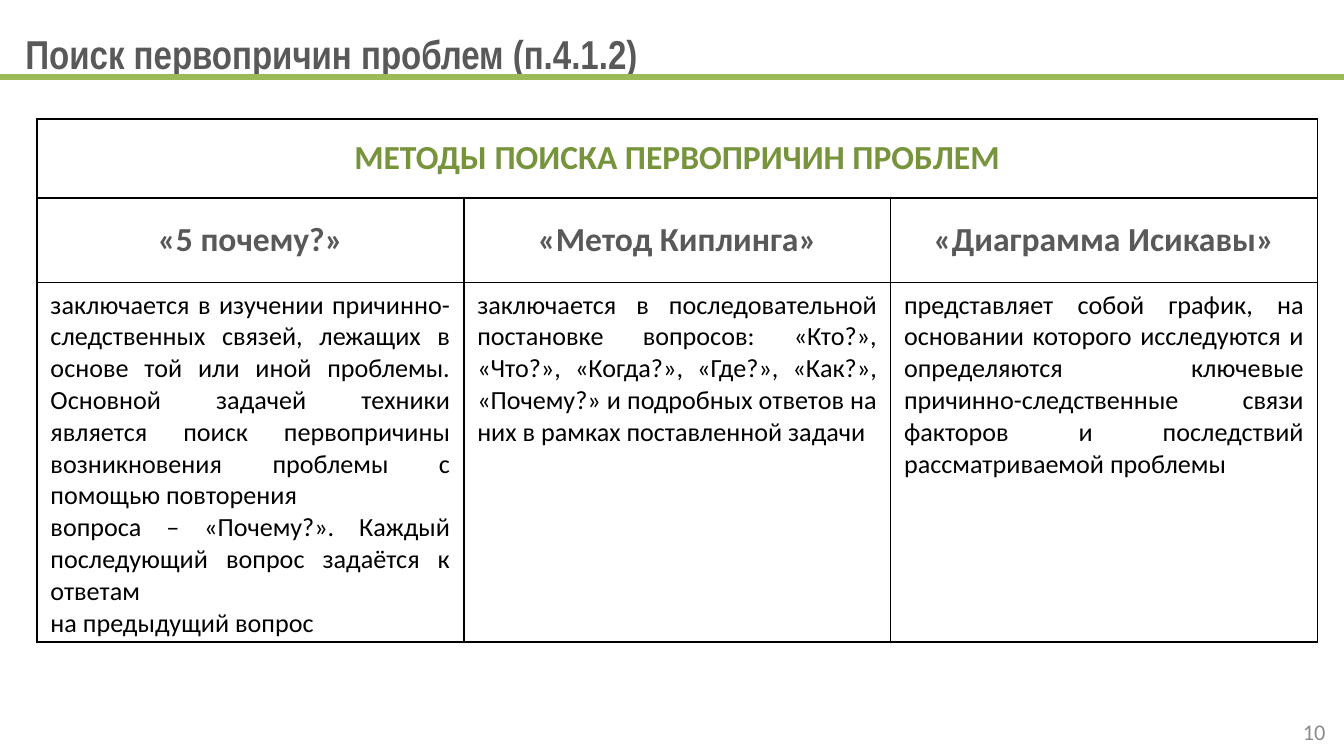
from dataclasses import dataclass

from lxml.etree import SubElement
from pptx import Presentation
from pptx.dml.color import RGBColor
from pptx.enum.shapes import MSO_CONNECTOR
from pptx.enum.text import MSO_ANCHOR, PP_ALIGN
from pptx.oxml.ns import qn
from pptx.util import Cm, Pt


@dataclass(frozen=True)
class Theme:
    heading_font: str = "Arial Narrow"
    body_font: str = "Calibri"
    gray: str = "595959"
    light_gray: str = "8C8C8C"
    rule_green: str = "9BBB59"
    text_green: str = "77933C"
    black: str = "000000"
    title_size: float = 21.6
    header_size: float = 18
    body_size: float = 14
    number_size: float = 12
    rule_width: float = 3
    border_width: float = 1


METHODS = [
    ("«5 почему?»", [
        "заключается в изучении причинно-следственных связей, лежащих в основе той "
        "или иной проблемы. Основной задачей техники является поиск первопричины "
        "возникновения проблемы с помощью повторения",
        "вопроса – «Почему?». Каждый последующий вопрос задаётся к ответам",
        "на предыдущий вопрос",
    ]),
    ("«Метод Киплинга»", [
        "заключается в последовательной постановке вопросов: «Кто?», «Что?», "
        "«Когда?», «Где?», «Как?», «Почему?» и подробных ответов на них в рамках "
        "поставленной задачи",
    ]),
    ("«Диаграмма Исикавы»", [
        "представляет собой график, на основании которого исследуются и определяются "
        "ключевые причинно-следственные связи факторов и последствий "
        "рассматриваемой проблемы",
    ]),
]


class SlideBuilder:
    def __init__(self, slide, theme):
        self.slide = slide
        self.theme = theme

    def fill_text(self, frame, paragraphs, size, color, font=None, bold=False,
                  align=PP_ALIGN.LEFT):
        for index, text in enumerate(paragraphs):
            paragraph = frame.paragraphs[0] if index == 0 else frame.add_paragraph()
            paragraph.text = text
            paragraph.alignment = align
            paragraph.font.name = font or self.theme.body_font
            paragraph.font.size = Pt(size)
            paragraph.font.bold = bold
            paragraph.font.color.rgb = RGBColor.from_string(color)

    def text(self, left, top, width, height, text, size, color, **style):
        box = self.slide.shapes.add_textbox(Cm(left), Cm(top), Cm(width), Cm(height))
        box.text_frame.word_wrap = True
        box.text_frame.vertical_anchor = MSO_ANCHOR.MIDDLE
        self.fill_text(box.text_frame, [text], size, color, **style)

    def rule(self, left, right, y):
        line = self.slide.shapes.add_connector(
            MSO_CONNECTOR.STRAIGHT, Cm(left), Cm(y), Cm(right), Cm(y))
        line.line.color.rgb = RGBColor.from_string(self.theme.rule_green)
        line.line.width = Pt(self.theme.rule_width)
        SubElement(line._element.spPr, qn("a:effectLst"))

    def outline(self, cell):
        """Draw all four borders; must run before the cell's fill is set."""
        properties = cell._tc.get_or_add_tcPr()
        for side in ("lnL", "lnR", "lnT", "lnB"):
            border = SubElement(properties, qn(f"a:{side}"),
                                w=str(Pt(self.theme.border_width)))
            fill = SubElement(border, qn("a:solidFill"))
            SubElement(fill, qn("a:srgbClr"), val=self.theme.black)

    def methods_table(self, left, top, width, row_heights, heading, methods):
        theme = self.theme
        table = self.slide.shapes.add_table(
            len(row_heights), len(methods), Cm(left), Cm(top),
            Cm(width), Cm(sum(row_heights))).table
        table.first_row = table.horz_banding = False
        for row, height in zip(table.rows, row_heights):
            row.height = Cm(height)
        for cell in table.iter_cells():
            self.outline(cell)
            cell.fill.background()

        def header(row, column, text, color):
            cell = table.cell(row, column)
            cell.vertical_anchor = MSO_ANCHOR.MIDDLE
            self.fill_text(cell.text_frame, [text], theme.header_size, color,
                           bold=True, align=PP_ALIGN.CENTER)

        table.cell(0, 0).merge(table.cell(0, len(methods) - 1))
        header(0, 0, heading, theme.text_green)
        for column, (name, description) in enumerate(methods):
            header(1, column, name, theme.gray)
            self.fill_text(table.cell(2, column).text_frame, description,
                           theme.body_size, theme.black, align=PP_ALIGN.JUSTIFY)


def main():
    theme = Theme()
    presentation = Presentation()
    presentation.slide_width, presentation.slide_height = Cm(25.4), Cm(14.29)
    slide = presentation.slides.add_slide(presentation.slide_layouts[6])
    builder = SlideBuilder(slide, theme)

    builder.text(0.23, 0.43, 22.86, 1.17, "Поиск первопричин проблем (п.4.1.2)",
                 theme.title_size, theme.gray, font=theme.heading_font, bold=True)
    builder.text(19.38, 13.44, 5.92, 0.76, "10", theme.number_size,
                 theme.light_gray, align=PP_ALIGN.RIGHT)
    builder.rule(0, 25.4, 1.45)
    builder.methods_table(0.7, 2.25, 24.2, [1.49, 1.6, 6.8],
                          "МЕТОДЫ ПОИСКА ПЕРВОПРИЧИН ПРОБЛЕМ", METHODS)
    presentation.save("out.pptx")


if __name__ == "__main__":
    main()
